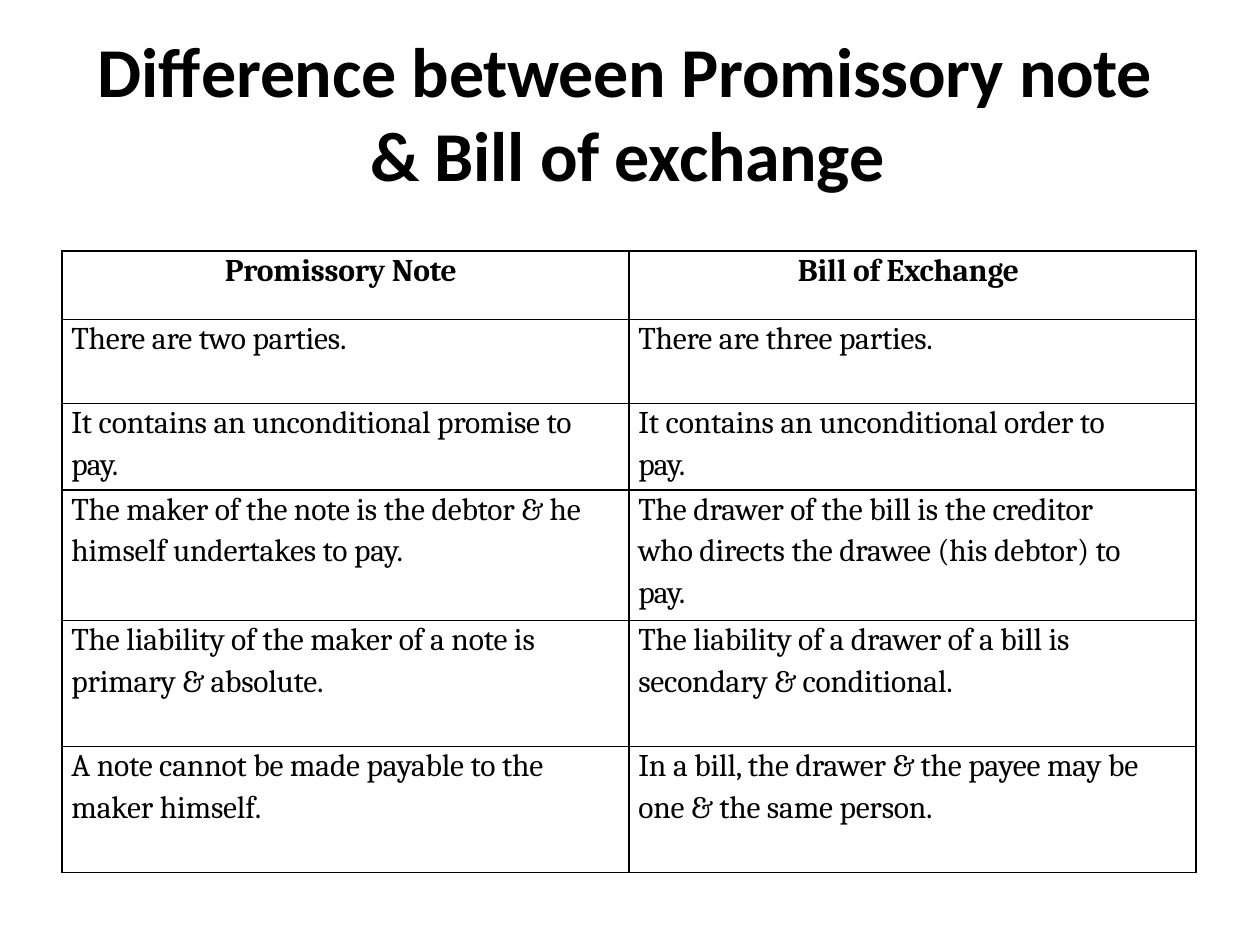
"""Build a slide comparing promissory notes with bills of exchange."""
import dataclasses

import lxml.etree
import pptx
import pptx.dml.color
import pptx.enum.text
import pptx.oxml.ns
import pptx.util

Pt = pptx.util.Pt
qn = pptx.oxml.ns.qn


@dataclasses.dataclass(frozen=True)
class Theme:
    """Colours, fonts and type sizes."""

    ink: str = "000000"
    title_font: str = "Calibri"
    body_font: str = "Cambria"
    title_size: float = 40
    body_size: float = 18
    rule: float = 1


@dataclasses.dataclass(frozen=True)
class Row:
    """A table row with the lines of both cells."""

    height: float
    note: tuple[str, ...]
    bill: tuple[str, ...]
    bold: bool = False
    indents: tuple[float, float] = (5.3, 5.3)


THEME = Theme()
COLUMN_WIDTH = 324
ROWS = (
    Row(39, ("Promissory Note",), ("Bill of Exchange",), True, (93, 96.5)),
    Row(48, ("There are two parties.",), ("There are three parties.",)),
    Row(49.5, ("It contains an unconditional promise to", "pay."),
        ("It contains an unconditional order to", "pay.")),
    Row(74.5, ("The maker of the note is the debtor & he", "himself undertakes to pay."),
        ("The drawer of the bill is the creditor",
         "who directs the drawee (his debtor) to", "pay.")),
    Row(72, ("The liability of the maker of a note is", "primary & absolute."),
        ("The liability of a drawer of a bill is", "secondary & conditional.")),
    Row(72, ("A note cannot be made payable to the", "maker himself."),
        ("In a bill, the drawer & the payee may be", "one & the same person.")),
)


def write_line(p, text: str, *, font: str, size: float, bold: bool = False,
               left: float = 0, hanging: float = 0, before: float = 0,
               tracking: float = -0.1) -> None:
    """Write one formatted paragraph."""
    p.alignment = pptx.enum.text.PP_ALIGN.LEFT
    p.space_before = Pt(before)
    pPr = p._p.get_or_add_pPr()
    pPr.set("marL", str(Pt(left)))
    pPr.set("indent", str(Pt(-hanging)))
    r = p.add_run()
    r.text = text
    r.font.name, r.font.size, r.font.bold = font, Pt(size), bold
    r.font.color.rgb = pptx.dml.color.RGBColor.from_string(THEME.ink)
    r._r.get_or_add_rPr().set("spc", str(round(tracking * 100)))


def add_title(s, text: str) -> None:
    """Add the slide title with a hanging second line."""
    sp = s.shapes.add_textbox(Pt(47.5), Pt(15), Pt(626), Pt(98))
    tf = sp.text_frame
    tf.word_wrap = True
    tf.margin_left = tf.margin_right = tf.margin_bottom = 0
    tf.margin_top = Pt(1)
    write_line(tf.paragraphs[0], text, font=THEME.title_font, size=THEME.title_size,
               bold=True, left=164, hanging=155.5, before=0.9, tracking=-0.15)


def add_borders(cell) -> None:
    """Rule all four sides of a cell."""
    tcPr = cell._tc.get_or_add_tcPr()
    for side in ("a:lnL", "a:lnR", "a:lnT", "a:lnB"):
        ln = lxml.etree.SubElement(tcPr, qn(side), w=str(Pt(THEME.rule)))
        fill = lxml.etree.SubElement(ln, qn("a:solidFill"))
        lxml.etree.SubElement(fill, qn("a:srgbClr"), val=THEME.ink)


def fill_cell(cell, lines: tuple[str, ...], left: float, bold: bool) -> None:
    """Write the lines of a cell and draw its borders."""
    cell.margin_left = cell.margin_right = cell.margin_bottom = 0
    cell.margin_top = Pt(1)
    add_borders(cell)
    cell.fill.background()
    tf = cell.text_frame
    for i, text in enumerate(lines):
        p = tf.add_paragraph() if i else tf.paragraphs[0]
        write_line(p, text, font=THEME.body_font, size=THEME.body_size, bold=bold,
                   left=left, before=3.2 if i else 0.7,
                   tracking=-0.5 if text == "pay." else -0.1)


def add_comparison(s, rows: tuple[Row, ...]) -> None:
    """Add the two-column comparison table."""
    height = sum(row.height for row in rows)
    table = s.shapes.add_table(len(rows), 2, Pt(35.5), Pt(143.5),
                               Pt(2 * COLUMN_WIDTH), Pt(height)).table
    table.first_row = table.horz_banding = False
    for column in table.columns:
        column.width = Pt(COLUMN_WIDTH)
    for i, row in enumerate(rows):
        table.rows[i].height = Pt(row.height)
        for j, lines in enumerate((row.note, row.bill)):
            fill_cell(table.cell(i, j), lines, row.indents[j], row.bold)


def main() -> None:
    """Build and save the slide."""
    prs = pptx.Presentation()
    prs.slide_width, prs.slide_height = Pt(720), Pt(540)
    s = prs.slides.add_slide(prs.slide_layouts[6])
    add_title(s, "Difference between Promissory note & Bill of exchange")
    add_comparison(s, ROWS)
    prs.save("out.pptx")


if __name__ == "__main__":
    main()
